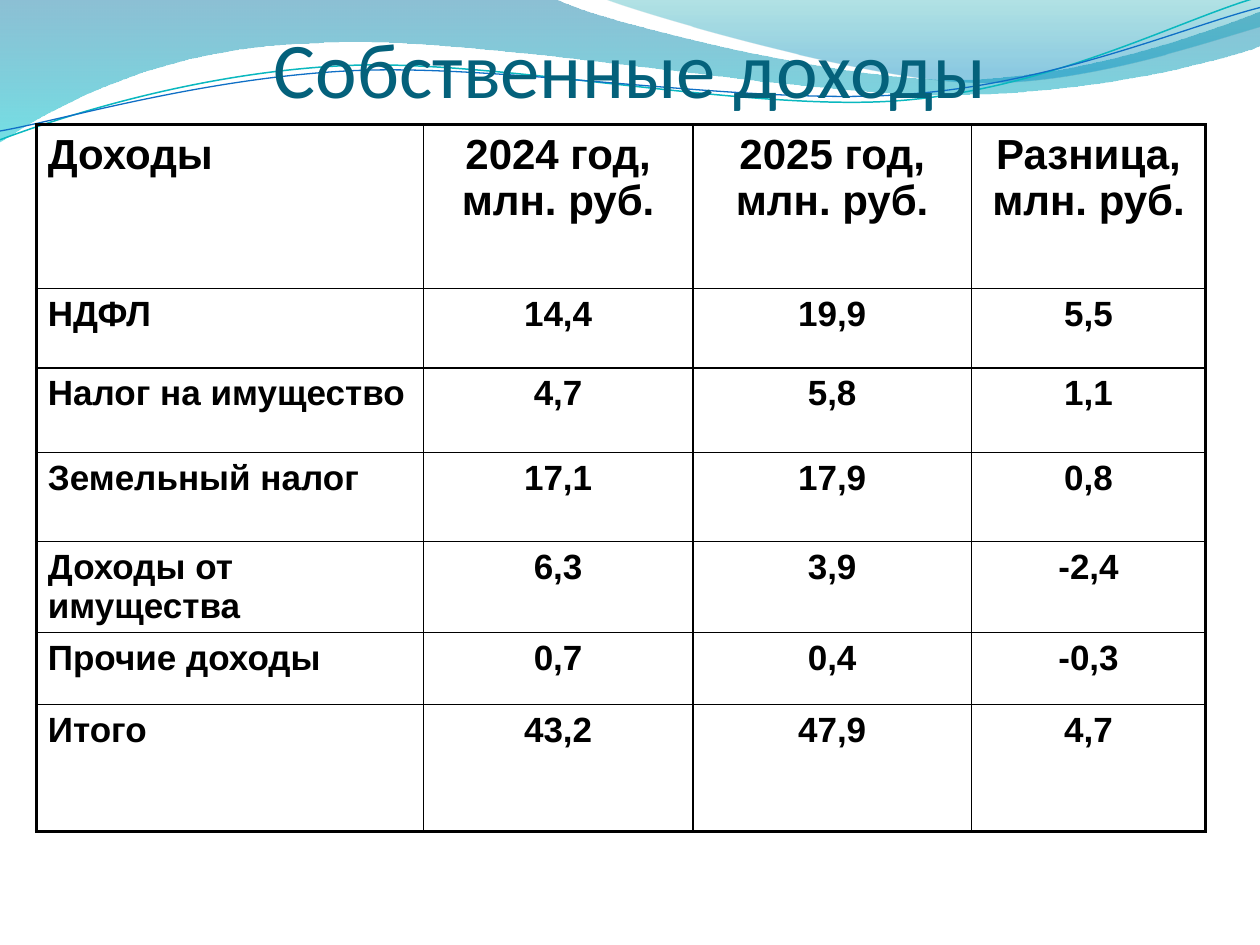
from lxml import etree
from pptx import Presentation
from pptx import util as u
from pptx.dml.color import RGBColor
from pptx.enum import text
from pptx.oxml.ns import qn

TITLE = "Собственные доходы"
HEADER = ("Доходы", "2024 год, млн. руб.", "2025 год, млн. руб.", "Разница, млн. руб.")
INCOME = [
    ("НДФЛ", "14,4", "19,9", "5,5"),
    ("Налог на имущество", "4,7", "5,8", "1,1"),
    ("Земельный налог", "17,1", "17,9", "0,8"),
    ("Доходы от имущества", "6,3", "3,9", "-2,4"),
    ("Прочие доходы", "0,7", "0,4", "-0,3"),
    ("Итого", "43,2", "47,9", "4,7"),
]
COLUMNS = (3.07, 2.14, 2.21, 1.86)
ROWS = (1.3, 0.63, 0.67, 0.71, 0.62, 0.57, 1.01)

BLACK = RGBColor(0x00, 0x00, 0x00)
TITLE_TEAL = RGBColor(0x04, 0x61, 0x7B)
DEEP_BLUE = RGBColor(0x00, 0x74, 0xA1)
CYAN = RGBColor(0x00, 0xC6, 0xCF)
TEAL = RGBColor(0x00, 0xA1, 0xA9)
SKY = RGBColor(0x00, 0x8B, 0xBF)
TEAL_LINE = RGBColor(0x0A, 0xB8, 0xBF)
BLUE_LINE = RGBColor(0x0F, 0x6F, 0xC6)

WAVES = [
    ([(0, 0), (4.4, -0.01), (4.76, 0.17, 6.64, 0.63, 7.58, 0.63),
      (8.53, 0.63, 9.58, 0.26, 10, 0.09), (10.01, 0.36),
      (9.83, 0.44, 8.7, 0.76, 7.46, 0.75), (6.22, 0.75, 3.82, 0.28, 2.57, 0.34),
      (1.29, 0.36, 0.46, 0.83, -0.01, 1.13), (0, 0)],
     [(0, DEEP_BLUE, 45), (1, CYAN, 55)]),
    ([(4.79, -0.01), (5.09, 0.11, 6.82, 0.62, 7.69, 0.65),
      (8.56, 0.69, 9.61, 0.32, 10, 0.21), (10, 0), (4.79, -0.01)],
     [(0, TEAL, 30), (0.8, SKY, 45)]),
]
STRANDS = [
    ([(0, 1.11), (0.48, 0.93, 1.58, 0.57, 2.77, 0.52),
      (3.95, 0.47, 5.93, 0.89, 7.13, 0.8), (8.33, 0.71, 9.38, 0.15, 9.98, -0.02)],
     TEAL_LINE, 0.85),
    ([(0, 1.04), (0.47, 0.96, 1.64, 0.61, 2.83, 0.56),
      (4.03, 0.51, 5.97, 0.84, 7.17, 0.75), (8.36, 0.67, 9.41, 0.21, 10, 0.06)],
     BLUE_LINE, 0.75),
]
UNITS = 1000


def add_outline(slide, outline, closed):
    """Add a freeform in which six-number segments become cubic curves."""
    start, *knots = [(round(x * UNITS), round(y * UNITS))
                     for segment in outline
                     for x, y in zip(segment[::2], segment[1::2])]
    builder = slide.shapes.build_freeform(*start, scale=u.Inches(1) / UNITS)
    builder.add_line_segments(knots, close=closed)
    shape = builder.convert_to_shape()
    shape.shadow.inherit = False
    straights = iter(list(shape._element.iter(qn("a:lnTo"))))
    for segment in outline[1:]:
        first = next(straights)
        if len(segment) == 6:
            first.tag = qn("a:cubicBezTo")
            for _ in range(2):
                extra = next(straights)
                first.append(extra[0])
                extra.getparent().remove(extra)
    return shape


def add_wave(slide, outline, stops):
    """Add a filled wave with a translucent vertical gradient."""
    wave = add_outline(slide, outline, True)
    wave.line.fill.background()
    wave.fill.gradient()
    wave.fill.gradient_angle = 270
    for stop, (position, colour, _) in zip(wave.fill.gradient_stops, stops):
        stop.position = position
        stop.color.rgb = colour
    tints = list(wave._element.spPr.iter(qn("a:srgbClr")))
    for tint, (_, _, opacity) in zip(tints, stops):
        etree.SubElement(tint, qn("a:alpha"), val=str(opacity * 1000))


def add_strand(slide, outline, colour, width):
    """Add an open curved line."""
    strand = add_outline(slide, outline, False)
    strand.fill.background()
    strand.line.color.rgb = colour
    strand.line.width = u.Pt(width)


def set_borders(cell, outer_sides):
    """Draw heavy borders on outer sides and thin ones elsewhere."""
    properties = cell._tc.get_or_add_tcPr()
    for index, side in enumerate("LRTB"):
        width = u.Pt(2.25 if side in outer_sides else 1)
        border = etree.Element(qn("a:ln" + side), w=str(width))
        solid = etree.SubElement(border, qn("a:solidFill"))
        etree.SubElement(solid, qn("a:srgbClr"), val=str(BLACK))
        properties.insert(index, border)


def add_income_table(slide):
    """Add the table of income by source and year."""
    records = [HEADER] + INCOME
    table = slide.shapes.add_table(
        len(ROWS), len(COLUMNS), u.Inches(0.29), u.Inches(0.99),
        u.Inches(sum(COLUMNS)), u.Inches(sum(ROWS))).table
    table.first_row = table.horz_banding = False
    for column, width in zip(table.columns, COLUMNS):
        column.width = u.Inches(width)
    for r, (record, height) in enumerate(zip(records, ROWS)):
        table.rows[r].height = u.Inches(height)
        for c, value in enumerate(record):
            cell = table.cell(r, c)
            cell.text = value
            cell.fill.background()
            cell.margin_left = cell.margin_right = u.Inches(0.09)
            cell.margin_top = cell.margin_bottom = u.Inches(0.05)
            entry = cell.text_frame.paragraphs[0]
            entry.alignment = text.PP_ALIGN.CENTER if c else text.PP_ALIGN.LEFT
            entry.font.name = "Arial"
            entry.font.size = u.Pt(20 if r else 24)
            entry.font.bold = True
            entry.font.color.rgb = BLACK
            edges = {"L": c == 0, "R": c == len(COLUMNS) - 1,
                     "T": r == 0, "B": r == len(ROWS) - 1}
            set_borders(cell, [side for side, outer in edges.items() if outer])


def place_title(slide):
    """Format the title and lay it over the waves."""
    title = slide.shapes.title
    title.left, title.top = u.Inches(0.5), u.Inches(0.3)
    title.width, title.height = u.Inches(9), u.Inches(0.61)
    frame = title.text_frame
    frame.text = TITLE
    frame.auto_size = text.MSO_AUTO_SIZE.NONE
    frame.vertical_anchor = text.MSO_ANCHOR.BOTTOM
    frame.margin_left = frame.margin_right = frame.margin_bottom = 0
    frame.margin_top = u.Inches(0.05)
    heading = frame.paragraphs[0]
    heading.alignment = text.PP_ALIGN.CENTER
    heading.font.name = "Calibri"
    heading.font.size = u.Pt(45)
    heading.font.color.rgb = TITLE_TEAL
    slide.shapes._spTree.append(title._element)


def main():
    """Build the own-income slide."""
    deck = Presentation()
    deck.slide_width, deck.slide_height = u.Inches(10), u.Inches(7.5)
    slide = deck.slides.add_slide(deck.slide_layouts[5])
    for wave in WAVES:
        add_wave(slide, *wave)
    for strand in STRANDS:
        add_strand(slide, *strand)
    place_title(slide)
    add_income_table(slide)
    deck.save("out.pptx")


if __name__ == "__main__":
    main()
